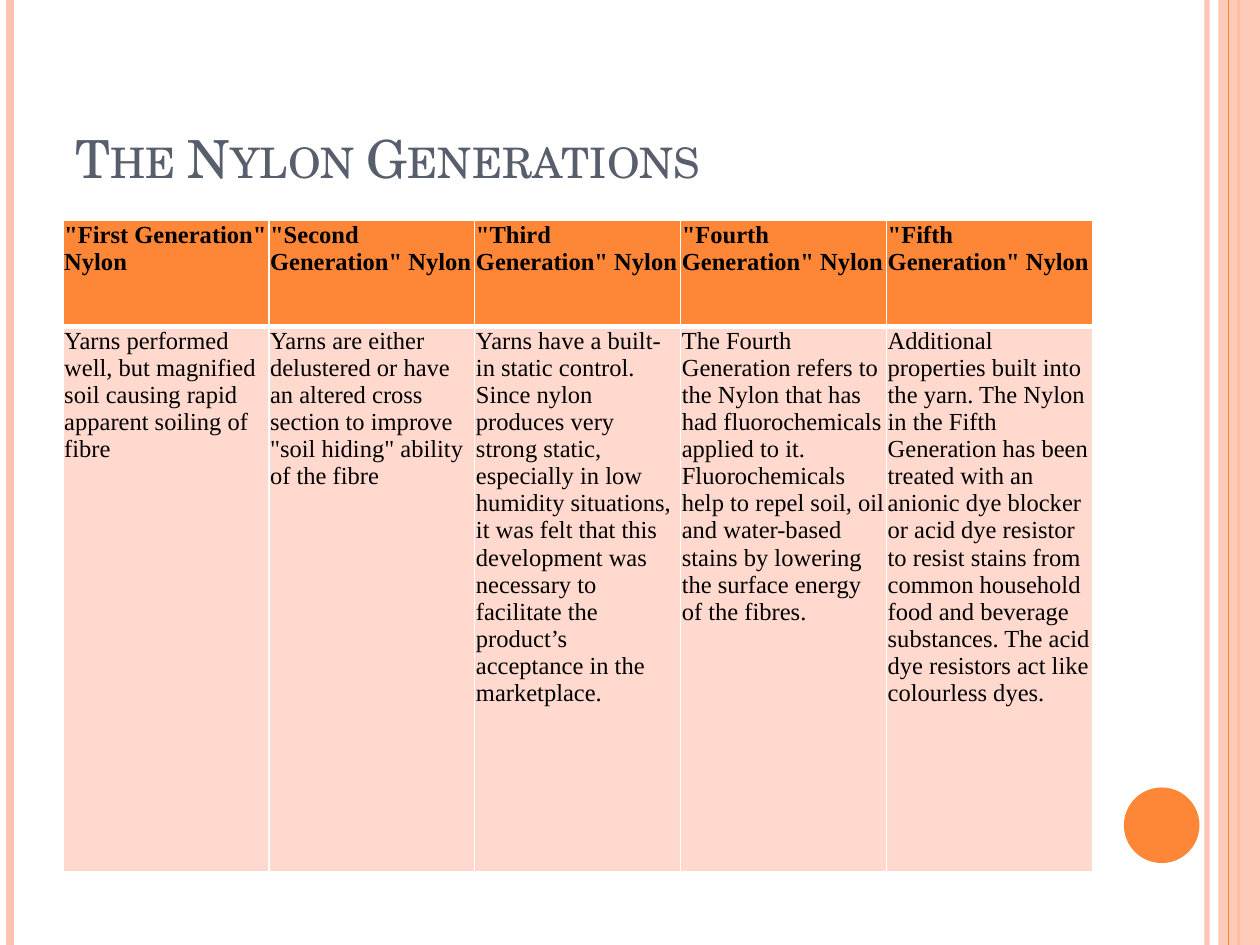
import pptx
import pptx.util
import pptx.dml.color
import pptx.enum.shapes
import pptx.enum.text
import pptx.oxml
import pptx.oxml.ns
from lxml import etree

# Content
TITLE = "The Nylon Generations"
GENERATIONS = [
    ("First", "Yarns performed well, but magnified soil causing rapid apparent "
     "soiling of fibre"),
    ("Second", "Yarns are either delustered or have an altered cross section to "
     "improve \"soil hiding\" ability of the fibre"),
    ("Third", "Yarns have a built-in static control. Since nylon produces very "
     "strong static, especially in low humidity situations, it was felt that this "
     "development was necessary to facilitate the product’s acceptance in the "
     "marketplace."),
    ("Fourth", "The Fourth Generation refers to the Nylon that has had "
     "fluorochemicals applied to it. Fluorochemicals help to repel soil, oil and "
     "water-based stains by lowering the surface energy of the fibres."),
    ("Fifth", "Additional properties built into the yarn. The Nylon in the Fifth "
     "Generation has been treated with an anionic dye blocker or acid dye resistor "
     "to resist stains from common household food and beverage substances. The acid "
     "dye resistors act like colourless dyes."),
]
COLORS = {"orange": "FE8637", "peach": "FEC3AE", "pale": "FFD9CE",
          "slate": "575F6D", "black": "000000", "white": "FFFFFF"}

# Layout: content column shared by title and table
WIDTH, HEIGHT = 10, 7.5
LEFT, CONTENT_WIDTH = 0.5, 8.17
TITLE_TOP, TITLE_HEIGHT = 0.3, 1.25
TABLE_TOP, ROW_HEIGHTS = 1.75, (0.84, 4.33)
# Vertical rules: x, colour, points, opacity in percent
RULES_BEHIND = [(9.58, "peach", 3, 93), (0.08, "peach", 4.5, 100),
                (9.83, "orange", 1.5, 100)]
RULES_FRONT = [(9.75, "orange", 0.75, 100)]

inches = pptx.util.Inches


def color(name):
    return pptx.dml.color.RGBColor.from_string(COLORS[name])


def set_opacity(shape, percent):
    for element in shape._element.spPr.iter(pptx.oxml.ns.qn("a:srgbClr")):
        etree.SubElement(element, pptx.oxml.ns.qn("a:alpha"), val=str(percent * 1000))


def add_rule(slide, x, name, points, opacity):
    rule = slide.shapes.add_connector(
        pptx.enum.shapes.MSO_CONNECTOR.STRAIGHT,
        inches(x), 0, inches(x), inches(HEIGHT))
    rule.line.color.rgb = color(name)
    rule.line.width = pptx.util.Pt(points)
    if opacity < 100:
        set_opacity(rule, opacity)
    etree.SubElement(rule._element.spPr, pptx.oxml.ns.qn("a:effectLst"))


def add_plain_shape(slide, kind, box, name):
    shape = slide.shapes.add_shape(kind, *map(inches, box))
    shape.shadow.inherit = False
    shape.fill.solid()
    shape.fill.fore_color.rgb = color(name)
    shape.line.fill.background()
    return shape


def set_borders(cell, widths):
    properties = cell._tc.get_or_add_tcPr()
    for position, (side, points) in enumerate(widths.items()):
        border = pptx.oxml.parse_xml(
            f'<a:ln{side} {pptx.oxml.ns.nsdecls("a")} w="{pptx.util.Pt(points)}">'
            f'<a:solidFill><a:srgbClr val="{COLORS["white"]}"/></a:solidFill>'
            f'</a:ln{side}>')
        properties.insert(position, border)


def fill_cell(cell, text, is_header):
    cell.text = text
    cell.margin_left = cell.margin_top = cell.margin_right = inches(0.01)
    cell.margin_bottom = 0
    cell.fill.solid()
    cell.fill.fore_color.rgb = color("orange" if is_header else "pale")
    font = cell.text_frame.paragraphs[0].font
    font.name = "Times New Roman"
    font.size = pptx.util.Pt(14)
    font.bold = is_header
    font.color.rgb = color("black")
    set_borders(cell, {"L": 1, "R": 1, "T": 1 if is_header else 3,
                       "B": 3 if is_header else 1})


def add_title(slide):
    title = slide.shapes.title
    title.left, title.top = inches(LEFT), inches(TITLE_TOP)
    title.width, title.height = inches(CONTENT_WIDTH), inches(TITLE_HEIGHT)
    title.text_frame.text = TITLE
    title.text_frame.vertical_anchor = pptx.enum.text.MSO_ANCHOR.BOTTOM
    paragraph = title.text_frame.paragraphs[0]
    paragraph.alignment = pptx.enum.text.PP_ALIGN.LEFT
    font = paragraph.runs[0].font
    font.name = "TeX Gyre Schola"
    font.size = pptx.util.Pt(30)
    font.color.rgb = color("slate")
    paragraph.runs[0]._r.get_or_add_rPr().set("cap", "small")


def add_generations_table(slide):
    table = slide.shapes.add_table(
        len(ROW_HEIGHTS), len(GENERATIONS), inches(LEFT), inches(TABLE_TOP),
        inches(CONTENT_WIDTH), inches(sum(ROW_HEIGHTS))).table
    for row, height in zip(table.rows, ROW_HEIGHTS):
        row.height = inches(height)
    for index, (ordinal, description) in enumerate(GENERATIONS):
        table.columns[index].width = inches(CONTENT_WIDTH / len(GENERATIONS))
        fill_cell(table.cell(0, index), f'"{ordinal} Generation" Nylon', True)
        fill_cell(table.cell(1, index), description, False)


def main():
    presentation = pptx.Presentation()
    presentation.slide_width, presentation.slide_height = inches(WIDTH), inches(HEIGHT)
    slide = presentation.slides.add_slide(presentation.slide_layouts[5])

    # Side decoration
    shapes = pptx.enum.shapes.MSO_SHAPE
    for rule in RULES_BEHIND:
        add_rule(slide, *rule)
    band = add_plain_shape(slide, shapes.RECTANGLE, (9.67, 0, 0.33, HEIGHT), "peach")
    set_opacity(band, 87)
    for rule in RULES_FRONT:
        add_rule(slide, *rule)
    add_plain_shape(slide, shapes.OVAL, (8.92, 6.25, 0.6, 0.6), "orange")

    # Title and table
    add_title(slide)
    add_generations_table(slide)
    presentation.save("out.pptx")


if __name__ == "__main__":
    main()
